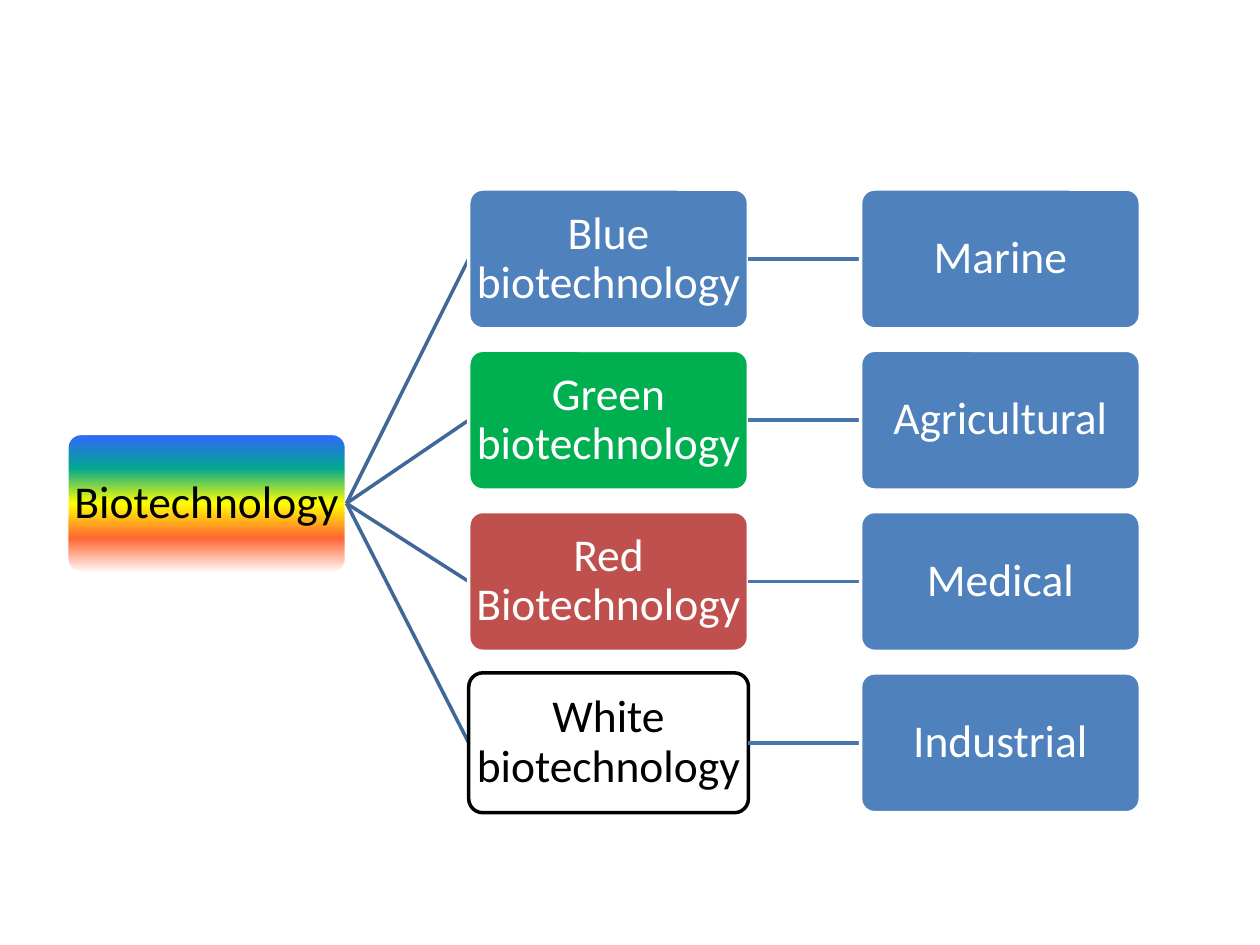
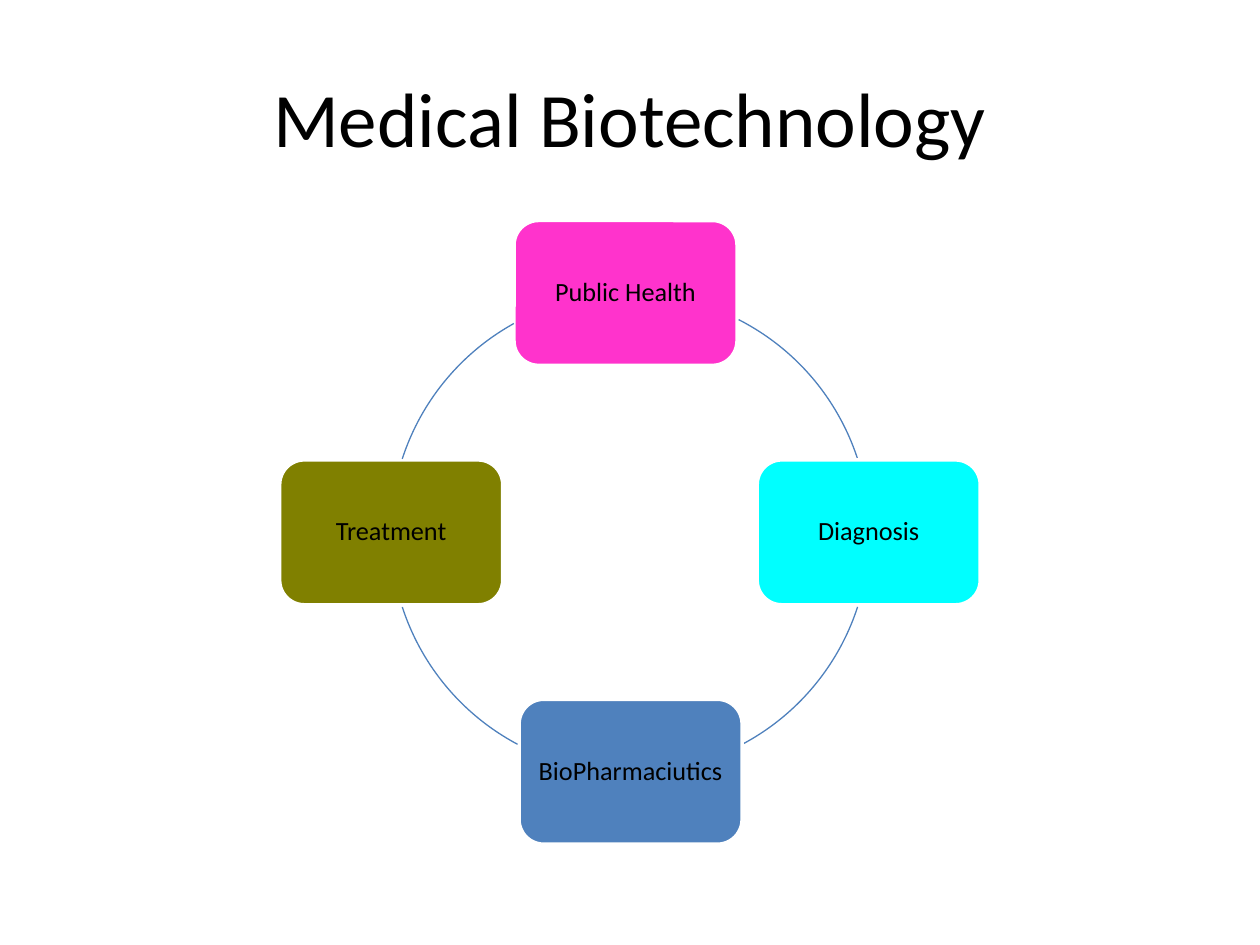
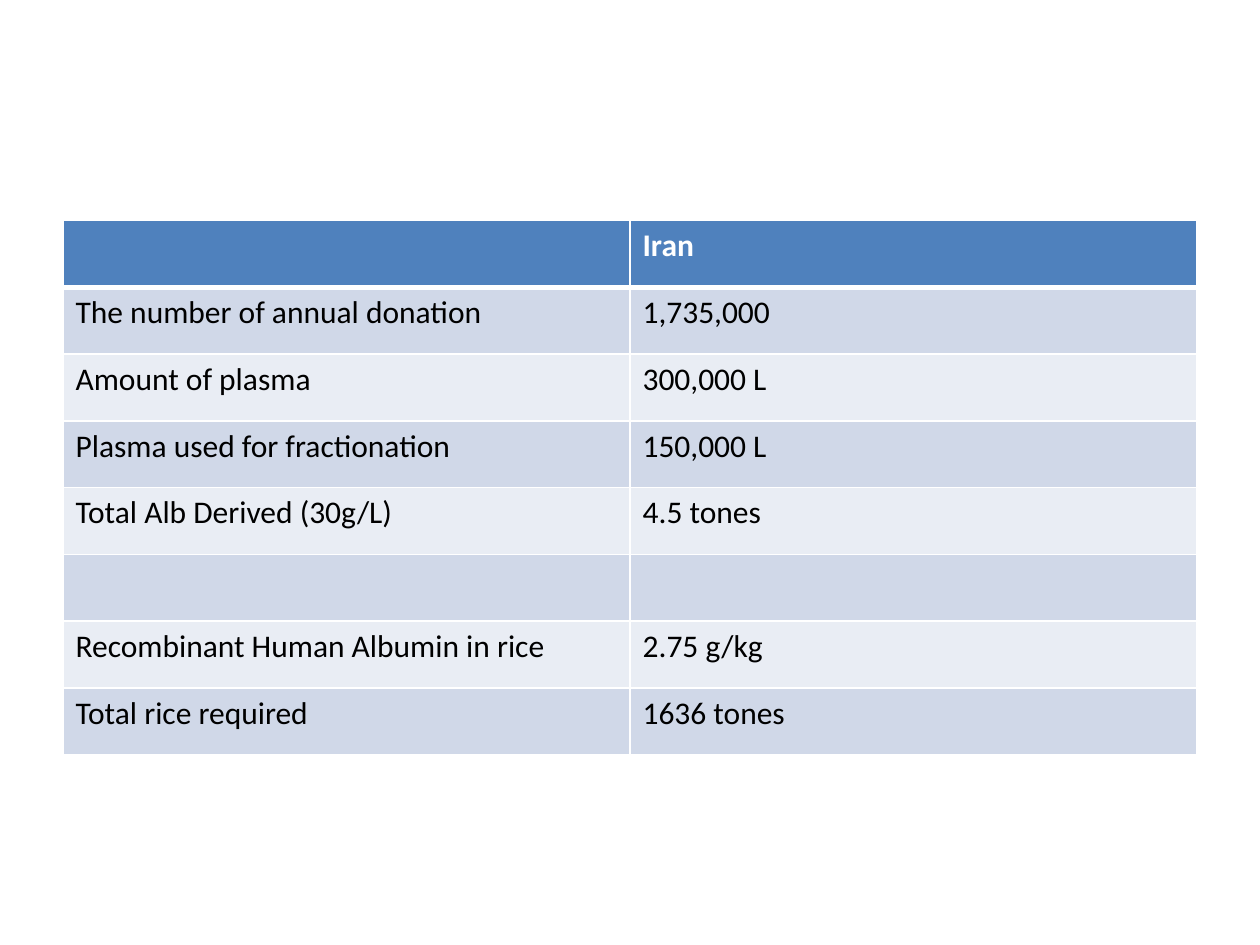
import copy
import dataclasses

import lxml.etree
import pptx
import pptx.dml.color
import pptx.enum.shapes
import pptx.enum.text
import pptx.oxml.ns
import pptx.util

Inches = pptx.util.Inches
Pt = pptx.util.Pt
Shape = pptx.enum.shapes.MSO_SHAPE
qn = pptx.oxml.ns.qn


@dataclasses.dataclass(frozen=True)
class Theme:
    font: str = "Calibri"
    black: str = "000000"
    white: str = "FFFFFF"
    blue: str = "4F81BD"
    green: str = "00B050"
    red: str = "C0504D"
    pink: str = "FF33CC"
    cyan: str = "00FFFF"
    olive: str = "808000"
    branch_line: str = "3F6797"
    leaf_line: str = "4875AC"
    bands: tuple = ("D0D8E8", "E9EDF4")
    rainbow: tuple = ("FFFFFF", "FF6633", "FFFF00", "01A78F", "3366FF")
    title_size: int = 44
    tree_size: int = 26
    cycle_size: int = 15
    table_size: int = 18
    box_line: float = 2
    arc_line: float = 0.75


THEME = Theme()


def color(value):
    return pptx.dml.color.RGBColor.from_string(value)


def style_text(frame, text, size, font_color, bold=False):
    frame.text = text
    for para in frame.paragraphs:
        for span in para.runs:
            span.font.name = THEME.font
            span.font.size = Pt(size)
            span.font.bold = bold
            span.font.color.rgb = color(font_color)


def center_text(frame, spacing=1.0):
    frame.word_wrap = True
    frame.vertical_anchor = pptx.enum.text.MSO_ANCHOR.MIDDLE
    for para in frame.paragraphs:
        para.alignment = pptx.enum.text.PP_ALIGN.CENTER
        para.line_spacing = spacing


def add_title(page, text):
    box = page.shapes.add_textbox(Inches(0.5), Inches(0.3), Inches(9), Inches(1.25))
    style_text(box.text_frame, text, THEME.title_size, THEME.black)
    center_text(box.text_frame)


def add_box(page, place, text, size, fill, font_color, corner, inset, outline=THEME.white):
    box = page.shapes.add_shape(Shape.ROUNDED_RECTANGLE, *map(Inches, place))
    box.adjustments[0] = corner
    box.shadow.inherit = False
    box.fill.solid()
    box.fill.fore_color.rgb = color(fill)
    box.line.color.rgb = color(outline)
    box.line.width = Pt(THEME.box_line)
    frame = box.text_frame
    frame.margin_left = frame.margin_right = Inches(inset)
    frame.margin_top = frame.margin_bottom = Inches(inset)
    style_text(frame, text, size, font_color)
    center_text(frame, spacing=0.9)
    return box


def fill_rainbow(box):
    box.fill.gradient()
    box.fill.gradient_angle = 90
    stop_list = next(box._element.spPr.iter(qn("a:gsLst")))
    for extra in range(len(THEME.rainbow) - len(stop_list)):
        stop_list.append(copy.deepcopy(stop_list[0]))
    last = len(THEME.rainbow) - 1
    for index, stop in enumerate(box.fill.gradient_stops):
        stop.position = index / last
        stop.color.rgb = color(THEME.rainbow[index])


def add_line(page, start, end, line_color):
    line = page.shapes.add_connector(
        pptx.enum.shapes.MSO_CONNECTOR.STRAIGHT, *map(Inches, (*start, *end)))
    line.line.color.rgb = color(line_color)
    line.line.width = Pt(THEME.box_line)
    lxml.etree.SubElement(line._element.spPr, qn("a:effectLst"))


def add_arc(page, place, start, end):
    arc = page.shapes.add_shape(Shape.ARC, *map(Inches, place))
    for index, degrees in enumerate((start, end)):
        arc.adjustments[index] = degrees * 60000 / 100000
    arc.shadow.inherit = False
    arc.fill.background()
    arc.line.color.rgb = color(THEME.blue)
    arc.line.width = Pt(THEME.arc_line)


def set_borders(cell, top, bottom):
    widths = {"a:lnL": 1, "a:lnR": 1, "a:lnT": top, "a:lnB": bottom}
    properties = cell._tc.get_or_add_tcPr()
    for index, (side, width) in enumerate(widths.items()):
        border = lxml.etree.Element(qn(side), w=str(Pt(width)))
        fill = lxml.etree.SubElement(border, qn("a:solidFill"))
        lxml.etree.SubElement(fill, qn("a:srgbClr"), val=THEME.white)
        properties.insert(index, border)


def add_table(page, rows, left, top, column_width, row_height):
    columns = len(rows[0])
    table = page.shapes.add_table(
        len(rows), columns, Inches(left), Inches(top),
        Inches(column_width * columns), Inches(row_height * len(rows))).table
    for row_index, values in enumerate(rows):
        header = row_index == 0
        fill = THEME.blue if header else THEME.bands[(row_index - 1) % 2]
        table.rows[row_index].height = Inches(row_height)
        for column_index, value in enumerate(values):
            cell = table.cell(row_index, column_index)
            cell.fill.solid()
            cell.fill.fore_color.rgb = color(fill)
            set_borders(cell, 3 if row_index == 1 else 1, 3 if header else 1)
            if value:
                style_text(cell.text_frame, value, THEME.table_size,
                           THEME.white if header else THEME.black, header)


def build_branches(page):
    width, height, pitch = 2.22, 1.11, 1.28
    root_left, branch_left, leaf_left = 0.53, 3.72, 6.83
    root_top, first_top = 3.44, 1.5
    branches = [
        ("Blue biotechnology", "Marine", THEME.blue, THEME.white, THEME.white),
        ("Green biotechnology", "Agricultural", THEME.green, THEME.white, THEME.white),
        ("Red Biotechnology", "Medical", THEME.red, THEME.white, THEME.white),
        ("White biotechnology", "Industrial", THEME.white, THEME.black, THEME.black),
    ]

    def add_node(left, top, text, fill, font_color, outline=THEME.white):
        return add_box(page, (left, top, width, height), text, THEME.tree_size,
                       fill, font_color, 0.1, 0, outline)

    fill_rainbow(add_node(root_left, root_top, "Biotechnology", THEME.white, THEME.black))
    root_end = (root_left + width, root_top + height / 2)
    for index, (branch, leaf, fill, font_color, outline) in enumerate(branches):
        top = first_top + index * pitch
        middle = top + height / 2
        add_line(page, root_end, (branch_left, middle), THEME.branch_line)
        add_node(branch_left, top, branch, fill, font_color, outline)
        add_line(page, (branch_left + width, middle), (leaf_left, middle), THEME.leaf_line)
        add_node(leaf_left, top, leaf, THEME.blue, THEME.white)


def build_cycle(page):
    width, height = 1.77, 1.15
    circle = (3.1, 2.33, 3.8, 3.8)
    steps = [
        ("Public Health", 4.08, 1.75, THEME.pink, 297, 342),
        ("Diagnosis", 6.01, 3.65, THEME.cyan, 18, 62),
        ("BioPharmaciutics", 4.12, 5.55, THEME.blue, 118, 162),
        ("Treatment", 2.22, 3.65, THEME.olive, 198, 241),
    ]
    add_title(page, "Medical Biotechnology")
    for text, left, top, fill, start, end in steps:
        add_box(page, (left, top, width, height), text, THEME.cycle_size,
                fill, THEME.black, 0.17, 0.02)
        add_arc(page, circle, start, end)


def build_albumin_table(page):
    rows = [
        ("", "Iran"),
        ("The number of annual donation", "1,735,000"),
        ("Amount of plasma", "300,000 L"),
        ("Plasma used for fractionation", "150,000 L"),
        ("Total Alb Derived (30g/L)", "4.5 tones"),
        ("", ""),
        ("Recombinant Human Albumin in rice", "2.75 g/kg"),
        ("Total rice required", "1636 tones"),
    ]
    add_table(page, rows, 0.5, 1.75, 4.5, 0.53)


def main():
    deck = pptx.Presentation()
    deck.slide_width = Inches(10)
    deck.slide_height = Inches(7.5)
    for build in (build_branches, build_cycle, build_albumin_table):
        build(deck.slides.add_slide(deck.slide_layouts[6]))
    deck.save("out.pptx")


if __name__ == "__main__":
    main()
